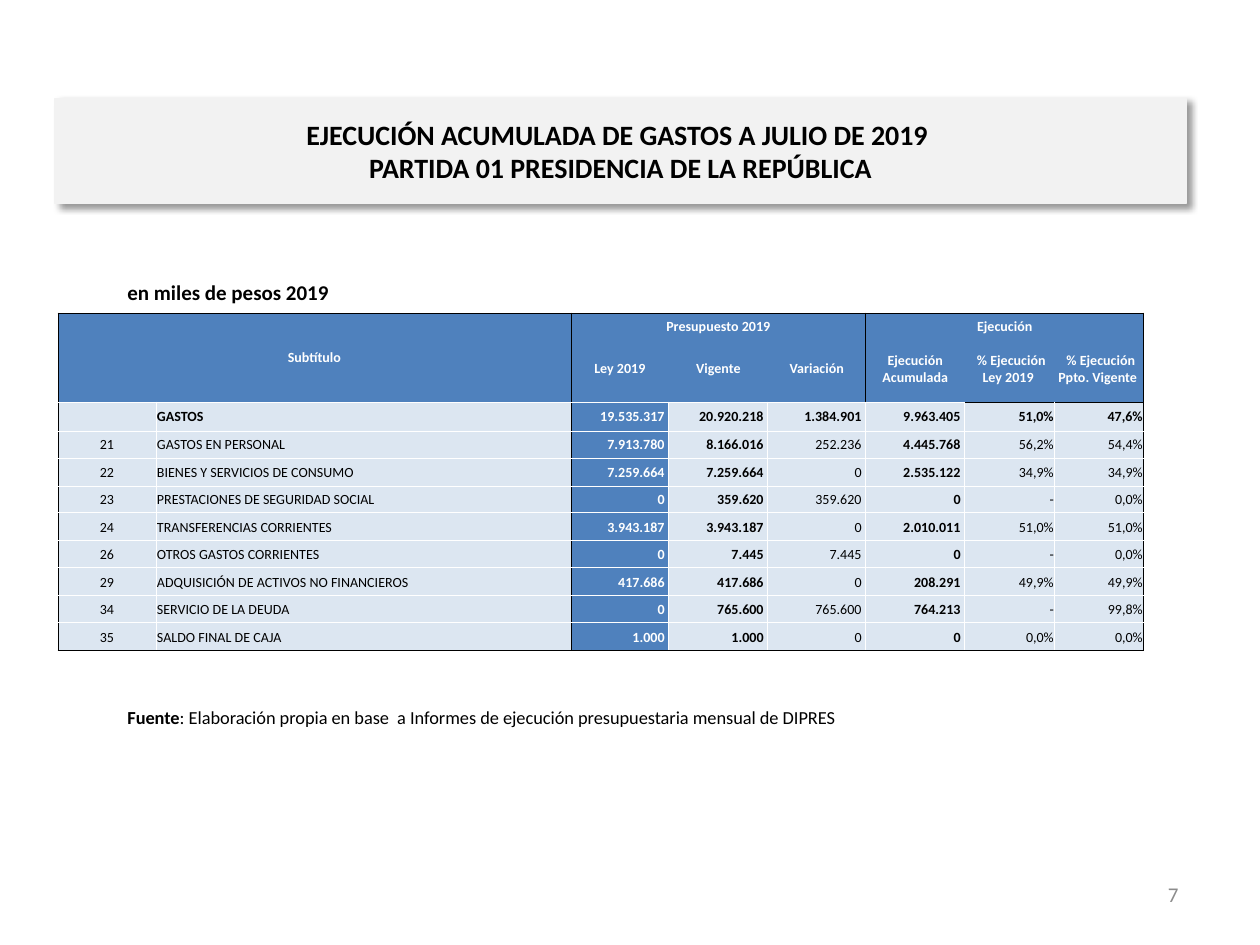
from lxml.etree import SubElement
from pptx import Presentation
from pptx.dml.color import RGBColor
from pptx.enum.text import MSO_ANCHOR, MSO_AUTO_SIZE, PP_ALIGN
from pptx.oxml.ns import qn
from pptx.util import Pt

PX = 914400 / 126
FONT = "Calibri"
BLACK = RGBColor(0x00, 0x00, 0x00)
WHITE = RGBColor(0xFF, 0xFF, 0xFF)
GRAY = RGBColor(0x8C, 0x8C, 0x8C)
PALE_GRAY = RGBColor(0xF2, 0xF2, 0xF2)
BLUE = RGBColor(0x4F, 0x81, 0xBD)
PALE_BLUE = RGBColor(0xDC, 0xE6, 0xF1)

COLS = [98, 415, 98, 99, 98, 99, 90, 89]
ROWS = [22, 67, 29] + [27, 28] * 4
HEADER = [
    ["Subtítulo", "", "Presupuesto 2019", "", "", "Ejecución", "", ""],
    ["", "", "Ley 2019", "Vigente", "Variación", "Ejecución Acumulada",
     " % Ejecución Ley 2019 ", " % Ejecución Ppto. Vigente "],
]
BODY = [
    ["", "GASTOS", "19.535.317", "20.920.218", "1.384.901", "9.963.405", "51,0%", "47,6%"],
    ["21", "GASTOS EN PERSONAL", "7.913.780", "8.166.016", "252.236", "4.445.768", "56,2%", "54,4%"],
    ["22", "BIENES Y SERVICIOS DE CONSUMO", "7.259.664", "7.259.664", "0", "2.535.122", "34,9%", "34,9%"],
    ["23", "PRESTACIONES DE SEGURIDAD SOCIAL", "0", "359.620", "359.620", "0", "-", "0,0%"],
    ["24", "TRANSFERENCIAS CORRIENTES", "3.943.187", "3.943.187", "0", "2.010.011", "51,0%", "51,0%"],
    ["26", "OTROS GASTOS CORRIENTES", "0", "7.445", "7.445", "0", "-", "0,0%"],
    ["29", "ADQUISICIÓN DE ACTIVOS NO FINANCIEROS", "417.686", "417.686", "0", "208.291", "49,9%", "49,9%"],
    ["34", "SERVICIO DE LA DEUDA", "0", "765.600", "765.600", "764.213", "-", "99,8%"],
    ["35", "SALDO FINAL DE CAJA", "1.000", "1.000", "0", "0", "0,0%", "0,0%"],
]


def px(n):
    return round(n * PX)


def add_run(p, text, size, color=BLACK, bold=False):
    r = p.add_run()
    r.text = text
    r.font.name = FONT
    r.font.size = Pt(size)
    r.font.bold = bold
    r.font.color.rgb = color


def add_shadow(sp):
    effects = SubElement(sp._element.spPr, qn("a:effectLst"))
    shadow = SubElement(effects, qn("a:outerShdw"), blurRad=str(Pt(4)), dist=str(Pt(3)),
                        dir="2700000", algn="tl", rotWithShape="0")
    color = SubElement(shadow, qn("a:srgbClr"), val=str(BLACK))
    SubElement(color, qn("a:alpha"), val="40000")


def set_title(sp, lines):
    sp.left, sp.top, sp.width, sp.height = px(55), px(110), px(1131), px(82)
    sp.fill.solid()
    sp.fill.fore_color.rgb = PALE_GRAY
    sp.line.color.rgb = PALE_GRAY
    sp.line.width = Pt(0.75)
    add_shadow(sp)
    tf = sp.text_frame
    tf.word_wrap = True
    tf.auto_size = MSO_AUTO_SIZE.SHAPE_TO_FIT_TEXT
    tf.vertical_anchor = MSO_ANCHOR.MIDDLE
    p = tf.paragraphs[0]
    p.alignment = PP_ALIGN.CENTER
    for i, line in enumerate(lines):
        if i:
            p.add_line_break()
            SubElement(p._p[-1], qn("a:rPr"), sz="1600")
        add_run(p, line, 16, bold=True)


def add_text(slide, x, y, w, h, runs, size, color=BLACK,
             align=PP_ALIGN.LEFT, anchor=MSO_ANCHOR.TOP):
    tf = slide.shapes.add_textbox(px(x), px(y), px(w), px(h)).text_frame
    tf.word_wrap = True
    tf.vertical_anchor = anchor
    p = tf.paragraphs[0]
    p.alignment = align
    for text, bold in runs:
        add_run(p, text, size, color, bold)


def column_edge(row, edge):
    """Colour of a vertical rule, or None where there is none."""
    if edge in (0, 2, 8) or (row < 2 and edge == 5):
        return BLACK
    return None if row < 2 else WHITE


def row_edge(edge, col):
    """Colour of a horizontal rule, or None where there is none."""
    if edge in (0, len(ROWS)) or (edge == 2 and col >= 6):
        return BLACK
    return None if edge == 1 else WHITE


def set_borders(cell, row, col):
    edges = {
        "a:lnL": column_edge(row, col),
        "a:lnR": column_edge(row, col + cell.span_width),
        "a:lnT": row_edge(row, col),
        "a:lnB": row_edge(row + cell.span_height, col),
    }
    tc_pr = cell._tc.get_or_add_tcPr()
    for tag, color in edges.items():
        ln = SubElement(tc_pr, qn(tag), w=str(Pt(0.5)))
        if color is None:
            SubElement(ln, qn("a:noFill"))
        else:
            fill = SubElement(ln, qn("a:solidFill"))
            SubElement(fill, qn("a:srgbClr"), val=str(color))


def set_cell(cell, row, col, text):
    header = row < 2
    dark = header or col == 2
    set_borders(cell, row, col)
    cell.fill.solid()
    cell.fill.fore_color.rgb = BLUE if dark else PALE_BLUE
    cell.margin_left = cell.margin_right = cell.margin_top = px(1)
    cell.margin_bottom = 0
    top_label = row == 0 and col > 0
    cell.vertical_anchor = MSO_ANCHOR.BOTTOM if top_label else MSO_ANCHOR.MIDDLE
    p = cell.text_frame.paragraphs[0]
    if header or col == 0:
        p.alignment = PP_ALIGN.CENTER
    else:
        p.alignment = PP_ALIGN.JUSTIFY if col == 1 else PP_ALIGN.RIGHT
    if not text:
        SubElement(p._p, qn("a:endParaRPr"), sz="800")
        return
    if not header and 2 <= col <= 5:
        text += " "
    bold = row <= 2 or col in (2, 3, 5)
    add_run(p, text, 8, WHITE if dark else BLACK, bold)


def add_budget_table(slide):
    frame = slide.shapes.add_table(len(ROWS), len(COLS), px(58), px(313),
                                   px(sum(COLS)), px(sum(ROWS)))
    table = frame.table
    table.first_row = table.horz_banding = False
    for column, width in zip(table.columns, COLS):
        column.width = px(width)
    for row, height in zip(table.rows, ROWS):
        row.height = px(height)
    # Header groups
    table.cell(0, 0).merge(table.cell(1, 1))
    table.cell(0, 2).merge(table.cell(0, 4))
    table.cell(0, 5).merge(table.cell(0, 7))
    for i, texts in enumerate(HEADER + BODY):
        for j, text in enumerate(texts):
            set_cell(table.cell(i, j), i, j, text)


def main():
    prs = Presentation()
    prs.slide_width, prs.slide_height = px(1260), px(945)
    slide = prs.slides.add_slide(prs.slide_layouts[5])

    # Title band
    set_title(slide.shapes.title, ["EJECUCIÓN ACUMULADA DE GASTOS A JULIO DE 2019 ",
                                   "PARTIDA 01 PRESIDENCIA DE LA REPÚBLICA"])

    # Page number, unit and source
    add_text(slide, 897, 869, 294, 50, [("7", False)], 12, GRAY,
             PP_ALIGN.RIGHT, MSO_ANCHOR.MIDDLE)
    add_text(slide, 115, 273, 963, 39, [("en miles de pesos 2019", True)], 12)
    add_text(slide, 115, 700, 1003, 50, [
        ("Fuente", True),
        (": Elaboración propia en base  a Informes de ejecución presupuestaria mensual de DIPRES", False),
    ], 10.5)

    # Spending by budget line
    add_budget_table(slide)
    prs.save("out.pptx")


if __name__ == "__main__":
    main()
